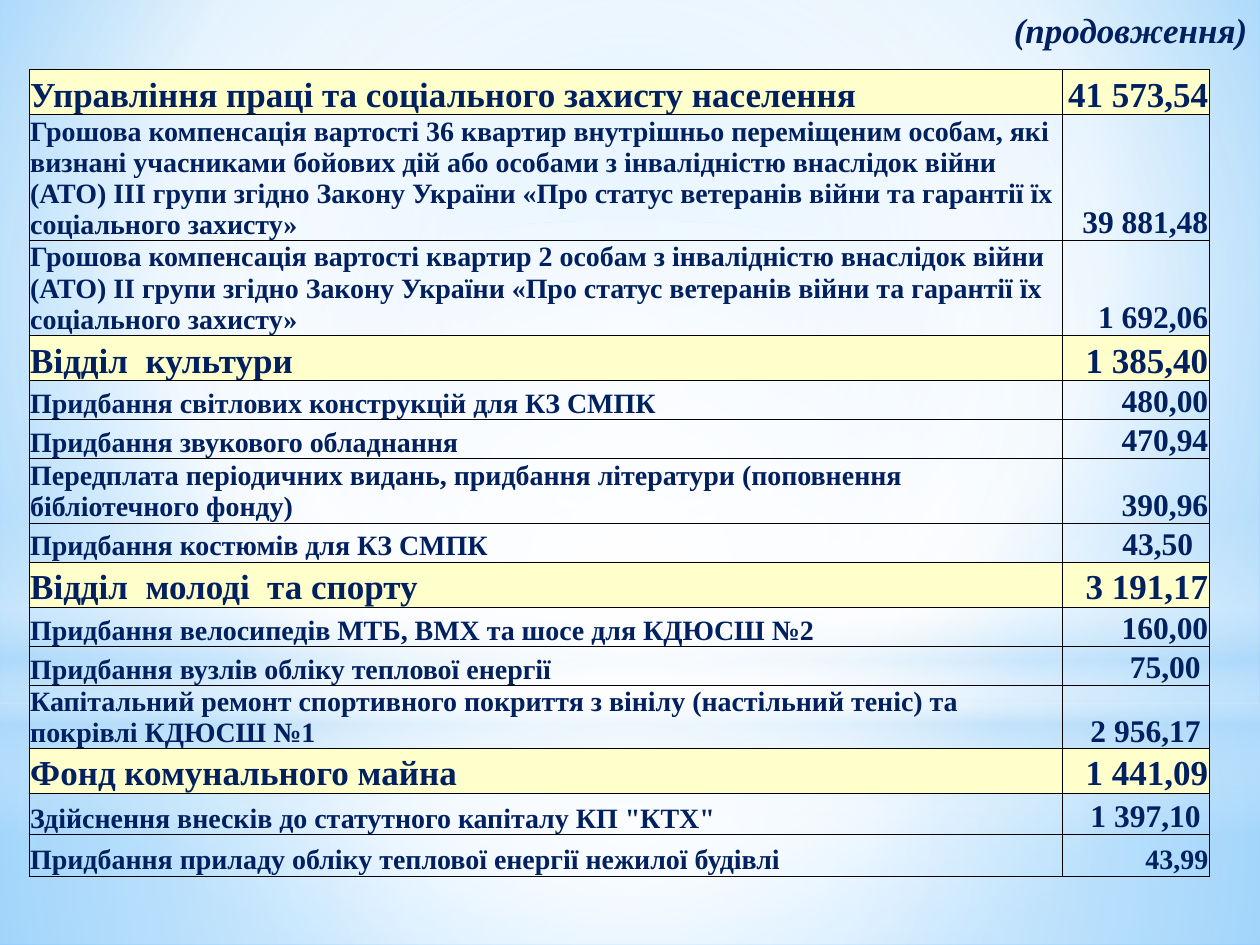
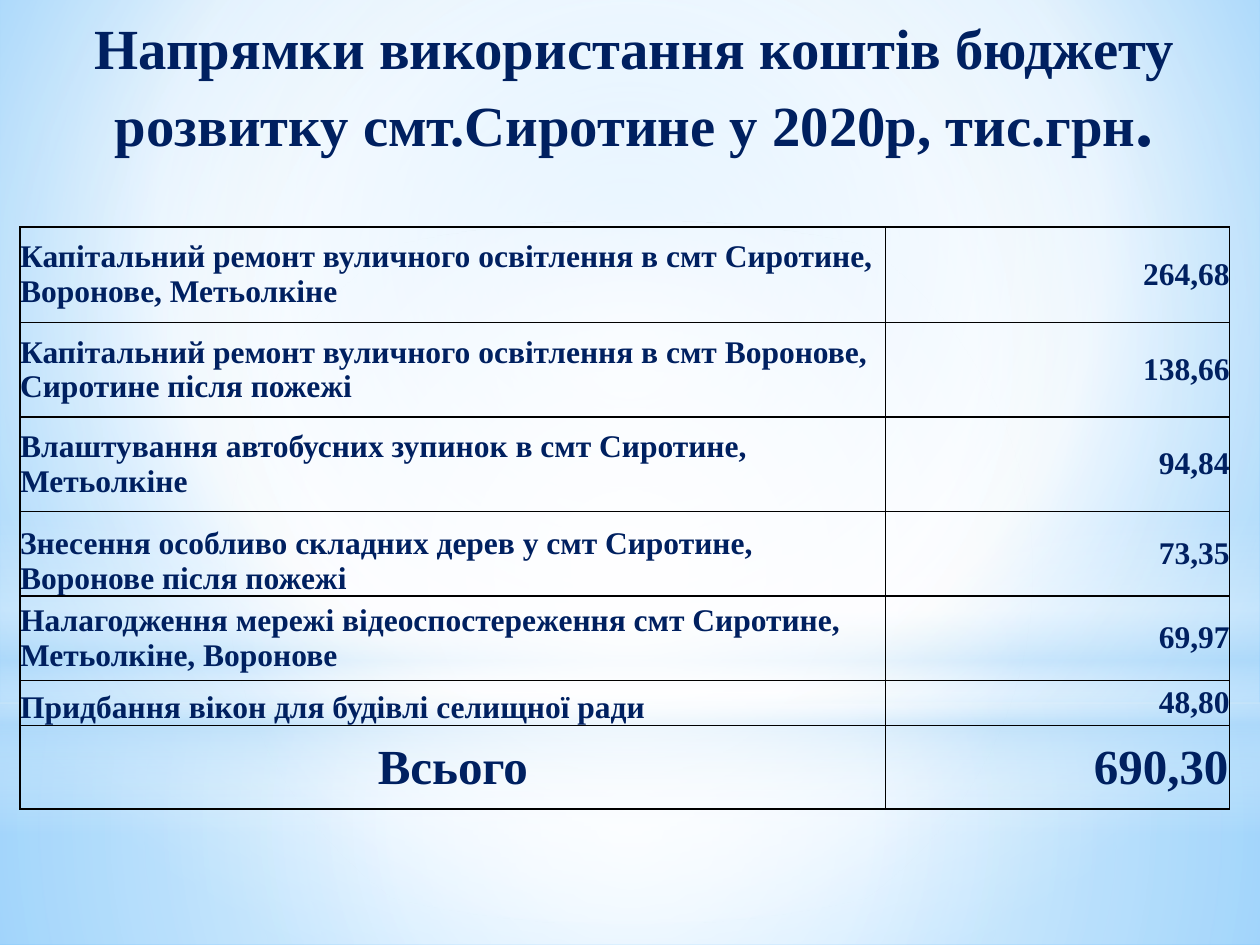
from lxml import etree
from pptx import Presentation, util as u
from pptx.dml.color import RGBColor
from pptx.enum import shapes, text
from pptx.oxml import parse_xml
from pptx.oxml.ns import nsdecls, qn

WIDE, HIGH = 10, 7.5
FONT = "Times New Roman"
NAVY = RGBColor(0x00, 0x20, 0x60)
CREAM = RGBColor(0xFF, 0xFF, 0xCC)
BLACK = RGBColor(0, 0, 0)
WHITE = RGBColor(0xFF, 0xFF, 0xFF)
PALE = RGBColor(0xB4, 0xDC, 0xFA)
SKY = RGBColor(0x9E, 0xD5, 0xFF)
BLUE = RGBColor(0x5B, 0xB9, 0xFF)

LEFT, MID, RIGHT = text.PP_ALIGN.LEFT, text.PP_ALIGN.CENTER, text.PP_ALIGN.RIGHT
LOW, HALF = text.MSO_ANCHOR.BOTTOM, text.MSO_ANCHOR.MIDDLE

# Gradient stops: position, colour, opacity (all in percent)
CORE = (50, 50, 50, 50)
BACK = [(0, SKY, 100), (60, WHITE, 100), (100, BLUE, 100)]
BACK_CORE = (20, 10, 20, 60)
BOX, OVAL = shapes.MSO_SHAPE.RECTANGLE, shapes.MSO_SHAPE.OVAL
# Preset, top, height, stops, focus (None means top to bottom)
BANDS = [
    (BOX, 5.58, 1.92, [(0, WHITE, 91), (37, WHITE, 76), (100, PALE, 79)], CORE),
    (BOX, 0, 5.58, [(0, WHITE, 89), (48, WHITE, 62), (100, PALE, 79)], CORE),
    (BOX, 4.12, 2.5, [(0, WHITE, 0), (29, WHITE, 30), (45, PALE, 40),
                      (55, WHITE, 26), (65, PALE, 60), (100, WHITE, 0)], None),
    (OVAL, 1.75, 5.58, [(0, WHITE, 100), (56, WHITE, 0)], CORE),
]

# Department: name, sum, row height, items
# Item: label, sum, row height, spaces kept free after the sum
UNITS = [
    ("Управління праці та соціального захисту населення", "41 573,54", 0.36, [
        ("Грошова компенсація вартості 36 квартир внутрішньо переміщеним особам, які "
         "визнані учасниками бойових дій або особами з інвалідністю внаслідок війни "
         "(АТО) ІІІ групи згідно Закону України «Про статус ветеранів війни та гарантії "
         "їх соціального захисту»", "39 881,48", 1.0, 0),
        ("Грошова компенсація вартості квартир 2 особам з інвалідністю внаслідок війни "
         "(АТО) ІІ групи згідно Закону України «Про статус ветеранів війни та гарантії "
         "їх соціального захисту»", "1 692,06", 0.75, 0)]),
    ("Відділ  культури", "1 385,40", 0.36, [
        ("Придбання світлових конструкцій для КЗ СМПК", "480,00", 0.31, 0),
        ("Придбання звукового обладнання", "470,94", 0.31, 0),
        ("Передплата періодичних видань, придбання літератури (поповнення "
         "бібліотечного фонду)", "390,96", 0.51, 0),
        ("Придбання костюмів для КЗ СМПК", "43,50", 0.31, 2)]),
    ("Відділ  молоді  та спорту", "3 191,17", 0.36, [
        ("Придбання велосипедів МТБ, BMX та шосе для КДЮСШ №2", "160,00", 0.31, 0),
        ("Придбання вузлів обліку теплової енергії", "75,00", 0.31, 1),
        ("Капітальний ремонт спортивного покриття з вінілу (настільний теніс) та "
         "покрівлі КДЮСШ №1", "2 956,17", 0.5, 1)]),
    ("Фонд комунального майна", "1 441,09", 0.35, [
        ("Здійснення внесків до статутного капіталу КП \"КТХ\"", "1 397,10", 0.33, 1),
        ("Придбання приладу обліку теплової енергії нежилої будівлі",
         "43,99", 0.33, 0)]),
]
SMALL_SUM = "43,99"

# Work: label, sum, row height, label anchor
WORKS = [
    ("Капітальний ремонт вуличного освітлення в смт Сиротине, Воронове, Метьолкіне",
     "264,68", 0.76, HALF),
    ("Капітальний ремонт вуличного освітлення в смт Воронове, Сиротине після пожежі",
     "138,66", 0.75, HALF),
    ("Влаштування автобусних зупинок в смт Сиротине, Метьолкіне", "94,84", 0.75, HALF),
    ("Знесення особливо складних дерев у смт Сиротине, Воронове після пожежі",
     "73,35", 0.67, LOW),
    ("Налагодження мережі відеоспостереження смт Сиротине, Метьолкіне, Воронове",
     "69,97", 0.67, HALF),
    ("Придбання вікон для будівлі селищної ради", "48,80", 0.36, LOW),
]
TOTAL = ("Всього", "690,30", 0.66)


def paint(owner, stops, focus):
    """Give a shape or a master background a gradient with opacity."""
    fill = owner.background.fill if hasattr(owner, "background") else owner.fill
    fill.solid()
    old = owner.element.find(".//" + qn("a:solidFill"))
    marks = "".join(
        f'<a:gs pos="{pos * 1000}"><a:srgbClr val="{tone}">'
        f'<a:alpha val="{alpha * 1000}"/></a:srgbClr></a:gs>'
        for pos, tone, alpha in stops)
    if focus:
        sides = " ".join(f'{side}="{share * 1000}"' for side, share in zip("ltrb", focus))
        way = f'<a:path path="circle"><a:fillToRect {sides}/></a:path>'
    else:
        way = '<a:lin ang="5400000" scaled="0"/>'
    old.getparent().replace(old, parse_xml(
        f'<a:gradFill {nsdecls("a")} rotWithShape="1"><a:gsLst>{marks}</a:gsLst>'
        f'{way}</a:gradFill>'))


def dress(deck, slide):
    """Put the sky and its bands on the master, drawing them on a slide first."""
    master = deck.slide_master
    paint(master, BACK, BACK_CORE)
    for order, (kind, top, high, stops, focus) in enumerate(BANDS):
        band = slide.shapes.add_shape(kind, 0, u.Inches(top), u.Inches(WIDE), u.Inches(high))
        band.shadow.inherit = False
        band.line.fill.background()
        paint(band, stops, focus)
        band.element.nvSpPr.cNvPr.set("id", str(20 + order))
        master.shapes.element.insert(2 + order, band.element)


def write(para, words, size, align, slant=False):
    para.alignment = align
    run = para.add_run()
    run.text = words
    font = run.font
    font.name, font.size, font.bold, font.italic = FONT, u.Pt(size), True, slant
    font.color.rgb = NAVY


def head(slide, place, anchor):
    """Place the title and return its first paragraph."""
    title = slide.shapes.title
    title.left, title.top, title.width, title.height = map(u.Inches, place)
    frame = title.text_frame
    frame.word_wrap = True
    frame.auto_size = text.MSO_AUTO_SIZE.NONE
    frame.vertical_anchor = anchor
    frame.margin_top = frame.margin_bottom = 0
    return frame.paragraphs[0]


def edge(cell, width):
    props = cell._tc.get_or_add_tcPr()
    for order, side in enumerate("LRTB"):
        line = etree.Element(qn(f"a:ln{side}"), w=str(u.Pt(width)))
        tone = etree.SubElement(etree.SubElement(line, qn("a:solidFill")), qn("a:srgbClr"))
        tone.set("val", str(BLACK))
        props.insert(order, line)


def grid(slide, left, top, cols, rows, width):
    """Draw a table; a row is its height, its fill and its cells,
    a cell is words, size, alignment, anchor, inset and right inset."""
    highs = [row[0] for row in rows]
    table = slide.shapes.add_table(
        len(rows), len(cols),
        *map(u.Inches, (left, top, sum(cols), sum(highs)))).table
    table.first_row = table.horz_banding = False
    for col, wide in zip(table.columns, cols):
        col.width = u.Inches(wide)
    for line, (high, tone, parts) in zip(table.rows, rows):
        line.height = u.Inches(high)
        for cell, (words, size, align, anchor, inset, right) in zip(line.cells, parts):
            cell.margin_left = cell.margin_top = u.Inches(inset)
            cell.margin_right, cell.margin_bottom = u.Inches(right), 0
            cell.vertical_anchor = anchor
            write(cell.text_frame.paragraphs[0], words, size, align)
            if tone:
                cell.fill.solid()
                cell.fill.fore_color.rgb = tone
            else:
                cell.fill.background()
            edge(cell, width)


def unit_rows():
    inset, space = 0.01, 0.06
    for name, total, high, items in UNITS:
        yield high, CREAM, [(name, 20, LEFT, LOW, inset, inset),
                            (total, 20, RIGHT, LOW, inset, inset)]
        for label, cost, tall, gap in items:
            size = 16 if cost == SMALL_SUM else 18
            yield tall, None, [(label, 16, LEFT, LOW, inset, inset),
                               (cost, size, RIGHT, LOW, inset, inset + gap * space)]


def work_rows():
    for label, cost, high, anchor in WORKS:
        yield high, None, [(label, 18, LEFT, anchor, 0, 0),
                           (cost, 18, RIGHT, HALF, 0, 0)]
    label, cost, high = TOTAL
    yield high, None, [(label, 28, MID, HALF, 0.01, 0.01),
                       (cost, 28, RIGHT, HALF, 0.01, 0.01)]


def main():
    deck = Presentation()
    deck.slide_width, deck.slide_height = u.Inches(WIDE), u.Inches(HIGH)
    plain = deck.slide_layouts[5]

    units = deck.slides.add_slide(plain)
    dress(deck, units)
    write(head(units, (WIDE / 2, 0, WIDE / 2, 0.47), HALF),
          "(продовження)", 20, RIGHT, slant=True)
    grid(units, 0.23, 0.55, (8.2, 1.17), list(unit_rows()), 0.5)

    works = deck.slides.add_slide(plain)
    para = head(works, (0.23, 0, 9.61, 1.5), text.MSO_ANCHOR.TOP)
    para.line_spacing = u.Pt(46)
    write(para, "Напрямки використання коштів бюджету розвитку смт.Сиротине "
                "у 2020р, тис.грн", 32.4, MID)
    write(para, ".", 41.4, MID)
    grid(works, 0.16, 1.8, (6.87, 2.73), list(work_rows()), 1)

    deck.save("out.pptx")


if __name__ == "__main__":
    main()
